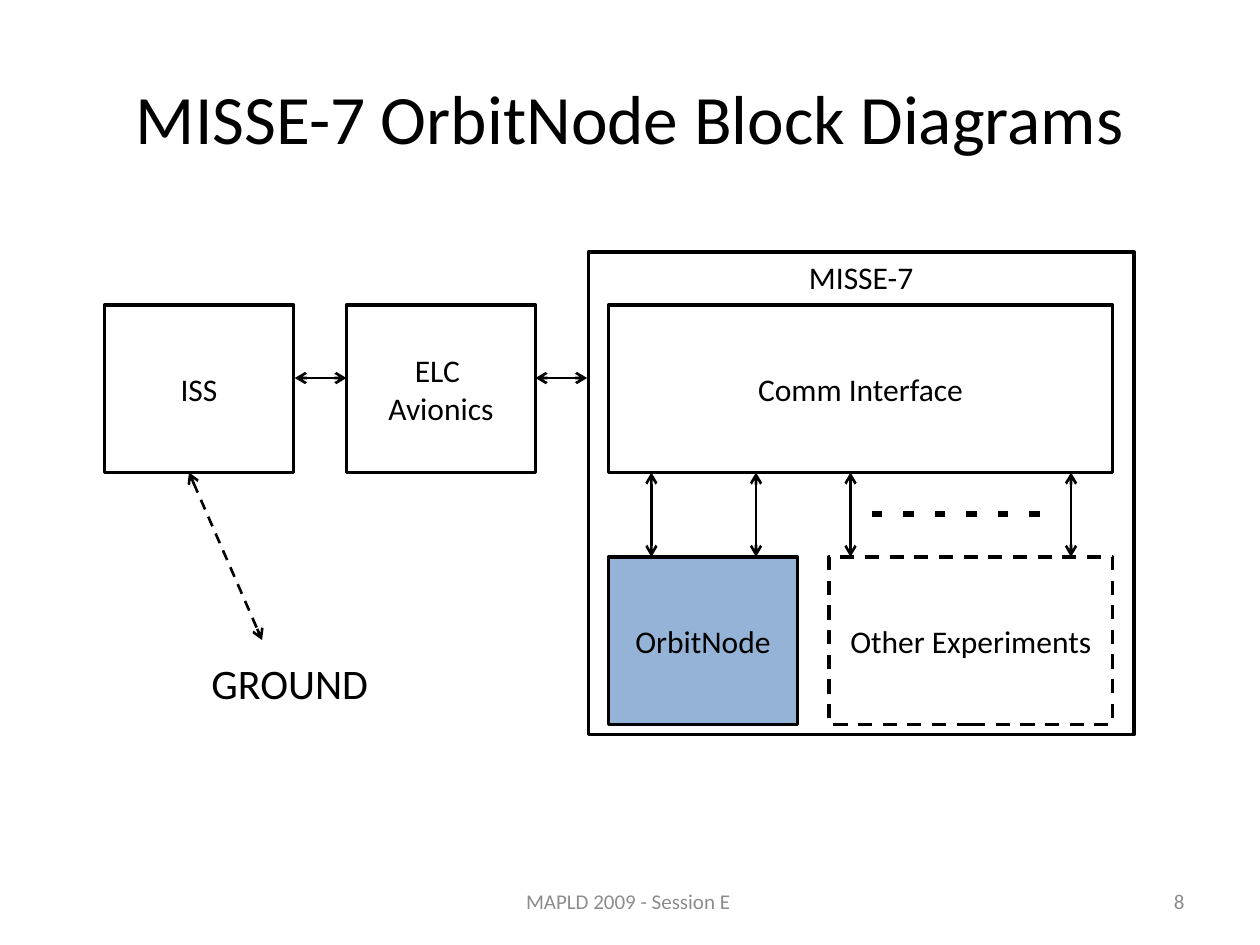
from lxml import etree
from pptx import Presentation
from pptx.dml.color import RGBColor
from pptx.enum.dml import MSO_LINE
from pptx.enum.shapes import MSO_CONNECTOR, MSO_SHAPE
from pptx.enum.text import MSO_ANCHOR, PP_ALIGN
from pptx.oxml.ns import qn
from pptx.util import Inches, Pt

DASH = MSO_LINE.DASH
RECT = MSO_SHAPE.RECTANGLE
LINE = MSO_CONNECTOR.STRAIGHT
TOP, MID = MSO_ANCHOR.TOP, MSO_ANCHOR.MIDDLE
LEFT, MIDST, RIGHT = PP_ALIGN.LEFT, PP_ALIGN.CENTER, PP_ALIGN.RIGHT
COLORS = {"ink": "000000", "gray": "8C8C8C", "blue": "95B3D7"}


def write(shape, text, size, color="ink", align=MIDST, anchor=MID):
    frame = shape.text_frame
    frame.word_wrap = True
    frame.vertical_anchor = anchor
    frame.text = text
    for para in frame.paragraphs:
        para.alignment = align
        for run in para.runs:
            run.font.size = Pt(size)
            run.font.name = "Calibri"
            run.font.color.rgb = RGBColor.from_string(COLORS[color])


def draw(x1, y1, x2, y2, width=1.5, arrow=True):
    link = slide.shapes.add_connector(LINE, Inches(x1), Inches(y1), Inches(x2), Inches(y2))
    link.line.width = Pt(width)
    link.line.color.rgb = RGBColor.from_string(COLORS["ink"])
    if arrow:
        pen = link.line._get_or_add_ln()
        for end in ("a:headEnd", "a:tailEnd"):
            etree.SubElement(pen, qn(end), type="arrow")
    etree.SubElement(link._element.spPr, qn("a:effectLst"))
    return link


deck = Presentation()
deck.slide_width, deck.slide_height = Inches(10), Inches(7.5)
slide = deck.slides.add_slide(deck.slide_layouts[5])

title = slide.shapes.title
title.left, title.top = Inches(0.5), Inches(0.3)
title.width, title.height = Inches(9), Inches(1.25)
write(title, "MISSE-7 OrbitNode Block Diagrams", 39.6)

labels = [
    (3.42, 6.95, 3.17, 0.4, "MAPLD 2009 - Session E ", 12, "gray", MIDST, MID),
    (7.17, 6.95, 2.33, 0.4, "8", 12, "gray", RIGHT, MID),
    (1.58, 5.17, 2, 0.5, "GROUND", 24, "ink", LEFT, TOP),
]
for x, y, w, h, text, size, color, align, anchor in labels:
    label = slide.shapes.add_textbox(Inches(x), Inches(y), Inches(w), Inches(h))
    write(label, text, size, color, align, anchor)

upper, lower, tall = 2.42, 4.42, 1.33
boxes = [
    (0.83, upper, 1.5, tall, "ISS", MID, None, None),
    (2.75, upper, 1.5, tall, "ELC \nAvionics", MID, None, None),
    (4.67, 2, 4.33, 3.83, "MISSE-7", TOP, None, None),
    (4.83, upper, 4, tall, "Comm Interface", MID, None, None),
    (4.83, lower, 1.5, tall, "OrbitNode", MID, "blue", None),
    (6.58, lower, 2.25, tall, "Other Experiments", MID, None, DASH),
]
for x, y, w, h, text, anchor, fill, dash in boxes:
    box = slide.shapes.add_shape(RECT, Inches(x), Inches(y), Inches(w), Inches(h))
    box.shadow.inherit = False
    if fill:
        box.fill.solid()
        box.fill.fore_color.rgb = RGBColor.from_string(COLORS[fill])
    else:
        box.fill.background()
    box.line.width = Pt(2)
    box.line.color.rgb = RGBColor.from_string(COLORS["ink"])
    if dash:
        box.line.dash_style = dash
    write(box, text, 18, anchor=anchor)

for x in (2.34, 4.25):
    draw(x, 3, x + 0.41, 3)
for x in (5.17, 6, 6.75, 8.5):
    draw(x, upper + tall, x, lower)
for i in range(6):
    x = 6.92 + i * 0.25
    draw(x, 4.08, x + 0.08, 4.08, 3, False)
draw(1.5, upper + tall, 2.08, 5.08).line.dash_style = DASH

deck.save("out.pptx")
